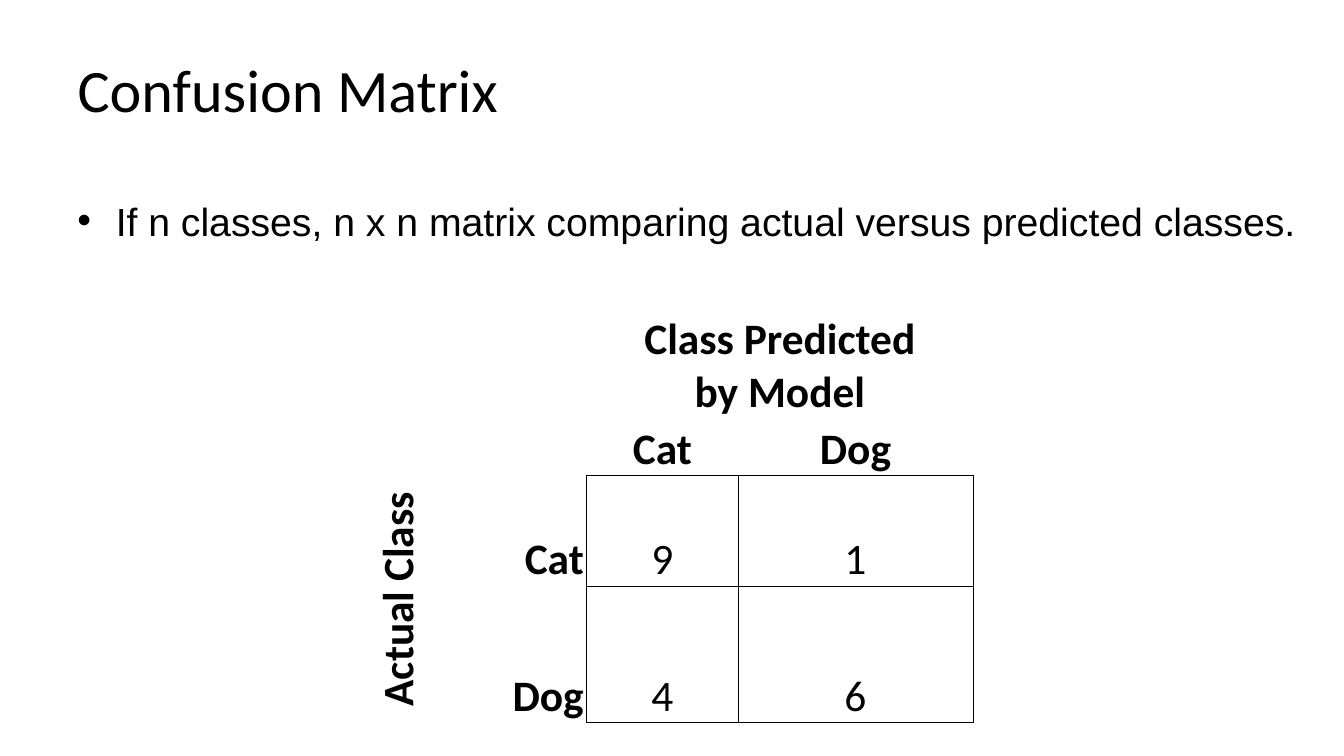
from dataclasses import dataclass

import pptx
import pptx.dml.color
import pptx.enum.text
import pptx.oxml.ns
import pptx.oxml.xmlchemy
import pptx.util
from lxml import etree

Inches = pptx.util.Inches
Pt = pptx.util.Pt
Align = pptx.enum.text.PP_ALIGN
Anchor = pptx.enum.text.MSO_ANCHOR
qn = pptx.oxml.ns.qn


@dataclass(frozen=True)
class Theme:
    ink: str = "000000"
    heading_font: str = "Calibri"
    body_font: str = "Arial"
    title_size: float = 43
    body_size: float = 28
    table_size: float = 31
    rule_width: float = 0.5


@dataclass(frozen=True)
class MatrixCell:
    row: int
    col: int
    text: str
    align: Align = Align.CENTER
    bold: bool = True
    row_span: int = 1
    col_span: int = 1
    vertical: bool = False


THEME = Theme()
CLASSES = ("Cat", "Dog")
COUNTS = ((9, 1), (4, 6))
COL_WIDTHS = (0.47, 1.69, 1.5, 2.33)
ROW_HEIGHTS = (1.08, 0.56, 1.1, 1.35)
FIRST = 2  # row and column where the counts begin


def add_run(p, text: str, font: str, size: float, bold: bool = False) -> None:
    r = p.add_run()
    r.text = text
    r.font.name = font
    r.font.size = Pt(size)
    r.font.bold = bold
    r.font.color.rgb = pptx.dml.color.RGBColor.from_string(THEME.ink)


def add_title(s, text: str) -> None:
    sp = s.shapes.title
    sp.left, sp.top = Inches(0.67), Inches(0.25)
    sp.width, sp.height = Inches(12.42), Inches(1.25)
    tf = sp.text_frame
    tf.vertical_anchor = Anchor.MIDDLE
    p = tf.paragraphs[0]
    p.alignment = Align.LEFT
    add_run(p, text, THEME.heading_font, THEME.title_size)


def add_bullet(s, text: str) -> None:
    sp = s.shapes.add_textbox(Inches(0.67), Inches(1.88), Inches(12.53), Inches(4.95))
    tf = sp.text_frame
    tf.word_wrap = True
    p = tf.paragraphs[0]
    p.line_spacing = 1.05
    pPr = p._p.get_or_add_pPr()
    pPr.set("marL", str(Inches(0.38)))
    pPr.set("indent", str(Inches(-0.38)))
    etree.SubElement(pPr, qn("a:buFont"), typeface=THEME.body_font)
    etree.SubElement(pPr, qn("a:buChar"), char="•")
    add_run(p, text, THEME.body_font, THEME.body_size)


def set_borders(cell, row: int, col: int) -> None:
    """Rule every side that touches a count cell and clear the others."""
    neighbours = {"L": (0, -1), "R": (0, 1), "T": (-1, 0), "B": (1, 0)}
    tcPr = cell._tc.get_or_add_tcPr()
    for side, (down, across) in neighbours.items():
        ln = etree.SubElement(tcPr, qn(f"a:ln{side}"), w=str(Pt(THEME.rule_width)))
        beside_count = row + down >= FIRST and col + across >= FIRST
        inside = row + down < len(ROW_HEIGHTS) and col + across < len(COL_WIDTHS)
        if (row >= FIRST and col >= FIRST) or (beside_count and inside):
            fill = etree.SubElement(ln, qn("a:solidFill"))
            etree.SubElement(fill, qn("a:srgbClr"), val=THEME.ink)
        else:
            etree.SubElement(ln, qn("a:noFill"))


def matrix_cells() -> list[MatrixCell]:
    cells = [
        MatrixCell(0, FIRST, "Class Predicted\nby Model", col_span=2),
        MatrixCell(FIRST, 0, "Actual Class", row_span=2, vertical=True),
    ]
    for i, name in enumerate(CLASSES):
        cells.append(MatrixCell(1, FIRST + i, name))
        cells.append(MatrixCell(FIRST + i, 1, name, Align.RIGHT))
        for j, count in enumerate(COUNTS[i]):
            cells.append(MatrixCell(FIRST + i, FIRST + j, str(count), bold=False))
    return cells


def fill_cell(table, item: MatrixCell) -> None:
    cell = table.cell(item.row, item.col)
    if item.row_span > 1 or item.col_span > 1:
        last = table.cell(item.row + item.row_span - 1, item.col + item.col_span - 1)
        cell.merge(last)
    if item.vertical:
        cell._tc.get_or_add_tcPr().set("vert", "vert270")
    p = cell.text_frame.paragraphs[0]
    p.alignment = item.align
    for i, line in enumerate(item.text.split("\n")):
        if i:
            p.add_line_break()
        add_run(p, line, THEME.heading_font, THEME.table_size, item.bold)


def add_matrix(s) -> None:
    frame = s.shapes.add_table(
        len(ROW_HEIGHTS), len(COL_WIDTHS), Inches(3.66), Inches(3.08),
        Inches(sum(COL_WIDTHS)), Inches(sum(ROW_HEIGHTS)),
    )
    table = frame.table
    table.first_row = table.horz_banding = False
    for column, width in zip(table.columns, COL_WIDTHS):
        column.width = Inches(width)
    for row, height in zip(table.rows, ROW_HEIGHTS):
        row.height = Inches(height)
    for row in range(len(ROW_HEIGHTS)):
        for col in range(len(COL_WIDTHS)):
            cell = table.cell(row, col)
            cell.margin_left = cell.margin_right = cell.margin_top = Inches(0.03)
            cell.margin_bottom = 0
            cell.vertical_anchor = Anchor.BOTTOM
            set_borders(cell, row, col)
            cell.fill.background()
    for item in matrix_cells():
        fill_cell(table, item)


def main() -> None:
    prs = pptx.Presentation()
    prs.slide_width, prs.slide_height = Inches(13.33), Inches(7.5)
    s = prs.slides.add_slide(prs.slide_layouts.get_by_name("Title Only"))
    add_title(s, "Confusion Matrix")
    add_bullet(s, "If n classes, n x n matrix comparing actual versus predicted classes.")
    add_matrix(s)
    prs.save("out.pptx")


if __name__ == "__main__":
    main()
